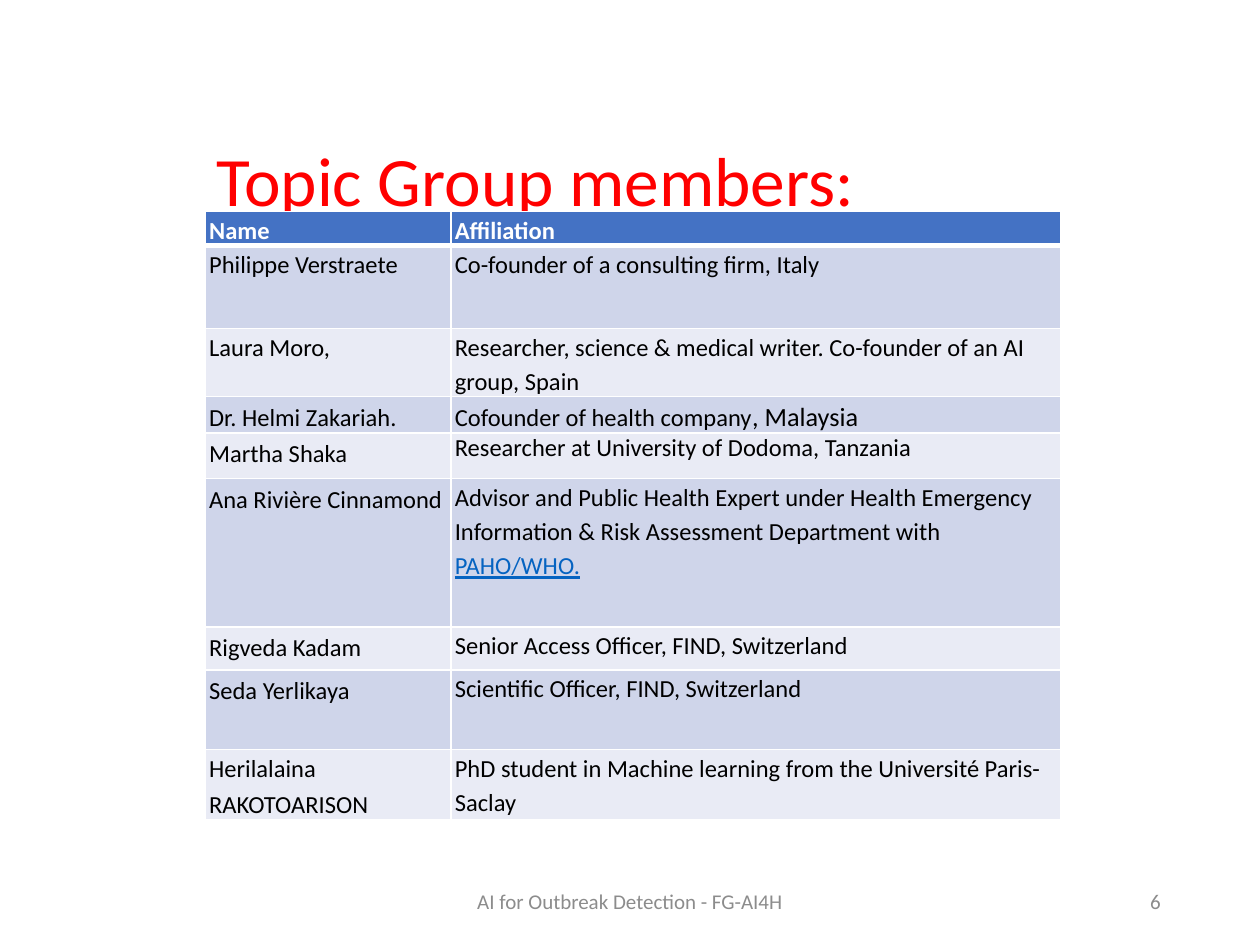
from dataclasses import dataclass

from lxml import etree
from pptx import Presentation
from pptx import util as u
from pptx.dml.color import RGBColor
from pptx.enum import text
from pptx.oxml import ns

FONT = "Calibri"
COLORS = {
    "title": "FF0000", "header": "4472C4", "odd": "CFD5EA", "even": "E9EBF5",
    "white": "FFFFFF", "black": "000000", "link": "0563C1", "footer": "8C8C8C",
}
WIDTH, HEIGHT = 10, 7.5
COLUMNS = (1.95, 4.84)
HEADER_HEIGHT = 0.26
BODY, LARGE = 14, 15


@dataclass
class Piece:
    words: str
    size: float = BODY
    color: str = "black"
    underline: bool = False


@dataclass
class Member:
    name: str
    affiliation: list[Piece]
    height: float
    large_end: bool = True  # the name ends in a larger space
    spacing: float = 1.15


@dataclass
class Label:
    words: str
    left: float  # left, top, width and height are shares of the slide
    top: float
    width: float
    height: float
    size: float
    color: str
    align: text.PP_ALIGN = text.PP_ALIGN.LEFT
    spacing: float = 1.0


MEMBERS = [
    Member("Philippe Verstraete", [Piece("Co-founder of a consulting firm, Italy")], 0.66, False),
    Member("Laura Moro,", [Piece("Researcher, science & medical writer. Co-founder of an AI group, Spain")],
           0.54, False),
    Member("Dr. Helmi Zakariah.", [Piece("Cofounder of health company"), Piece(", Malaysia", LARGE)], 0.29),
    Member("Martha Shaka", [Piece("Researcher at University of Dodoma, Tanzania")], 0.36, spacing=1.0),
    Member("Ana Rivière Cinnamond",
           [Piece("Advisor and Public Health Expert under Health Emergency "
                  "Information & Risk Assessment Department with "),
            Piece("PAHO/WHO.", color="link", underline=True)], 1.18),
    Member("Rigveda Kadam", [Piece("Senior Access Officer, FIND, Switzerland")], 0.34),
    Member("Seda Yerlikaya", [Piece("Scientific Officer, FIND, Switzerland")], 0.63),
    Member("Herilalaina RAKOTOARISON",
           [Piece("PhD student in Machine learning from the Université Paris-Saclay")], 0.56),
]

LABELS = [
    Label("Topic Group members:", 0.162, 0.155, 0.675, 0.079, 39.6, "title", spacing=0.9),
    Label("AI for Outbreak Detection - FG-AI4H", 0.331, 0.927, 0.338, 0.053, 12, "footer",
          text.PP_ALIGN.CENTER),
    Label("6", 0.706, 0.927, 0.225, 0.053, 12, "footer", text.PP_ALIGN.RIGHT),
]


def rgb(color: str) -> RGBColor:
    return RGBColor.from_string(COLORS[color])


def add_label(slide, label: Label) -> None:
    sp = slide.shapes.add_textbox(
        u.Inches(label.left * WIDTH), u.Inches(label.top * HEIGHT),
        u.Inches(label.width * WIDTH), u.Inches(label.height * HEIGHT))
    tf = sp.text_frame
    tf.word_wrap = True
    tf.vertical_anchor = text.MSO_ANCHOR.MIDDLE
    p = tf.paragraphs[0]
    p.text = label.words
    p.alignment = label.align
    p.line_spacing = label.spacing
    p.font.name, p.font.size = FONT, u.Pt(label.size)
    p.font.color.rgb = rgb(label.color)


def set_borders(cell, widths: dict[str, float]) -> None:
    """Put white borders, with widths in points by side, ahead of the cell's fill."""
    tc_pr = cell._tc.get_or_add_tcPr()
    for i, (side, width) in enumerate(widths.items()):
        ln = etree.Element(ns.qn(f"a:ln{side}"), w=str(u.Pt(width)))
        fill = etree.SubElement(ln, ns.qn("a:solidFill"))
        etree.SubElement(fill, ns.qn("a:srgbClr"), val=COLORS["white"])
        tc_pr.insert(i, ln)


def fill_cell(cell, pieces: list[Piece], fill: str, spacing: float = 1.15,
              bold: bool = False, top: float = 1, bottom: float = 1) -> None:
    cell.margin_left = cell.margin_right = u.Inches(0.03)
    cell.margin_top = cell.margin_bottom = 0
    cell.fill.solid()
    cell.fill.fore_color.rgb = rgb(fill)
    set_borders(cell, {"L": 1, "R": 1, "T": top, "B": bottom})
    p = cell.text_frame.paragraphs[0]
    p.line_spacing = spacing
    p.space_after = u.Pt(6)
    p.font.name, p.font.bold = FONT, bold
    for piece in pieces:
        r = p.add_run()
        r.text = piece.words
        r.font.name, r.font.size = FONT, u.Pt(piece.size)
        r.font.bold = bold
        r.font.color.rgb = rgb(piece.color)
        if piece.underline:
            r.font.underline = True


def add_members(slide, members: list[Member]) -> None:
    heights = [HEADER_HEIGHT] + [m.height for m in members]
    table = slide.shapes.add_table(
        len(heights), len(COLUMNS), u.Inches(1.63), u.Inches(1.68),
        u.Inches(sum(COLUMNS)), u.Inches(sum(heights))).table
    for column, width in zip(table.columns, COLUMNS):
        column.width = u.Inches(width)
    for row, height in zip(table.rows, heights):
        row.height = u.Inches(height)
    for col, heading in enumerate(("Name", "Affiliation")):
        fill_cell(table.cell(0, col), [Piece(heading, color="white")], "header", bold=True, bottom=3)
    for row, member in enumerate(members, 1):
        fill = "odd" if row % 2 else "even"
        top = 3 if row == 1 else 1
        name = [Piece(member.name)] + ([Piece(" ", LARGE)] if member.large_end else [])
        fill_cell(table.cell(row, 0), name, fill, top=top)
        fill_cell(table.cell(row, 1), member.affiliation, fill, member.spacing, top=top)


def main() -> None:
    prs = Presentation()
    prs.slide_width, prs.slide_height = u.Inches(WIDTH), u.Inches(HEIGHT)
    slide = prs.slides.add_slide(prs.slide_layouts[6])
    title, *footers = LABELS
    add_label(slide, title)
    add_members(slide, MEMBERS)
    for footer in footers:
        add_label(slide, footer)
    prs.save("out.pptx")


if __name__ == "__main__":
    main()
